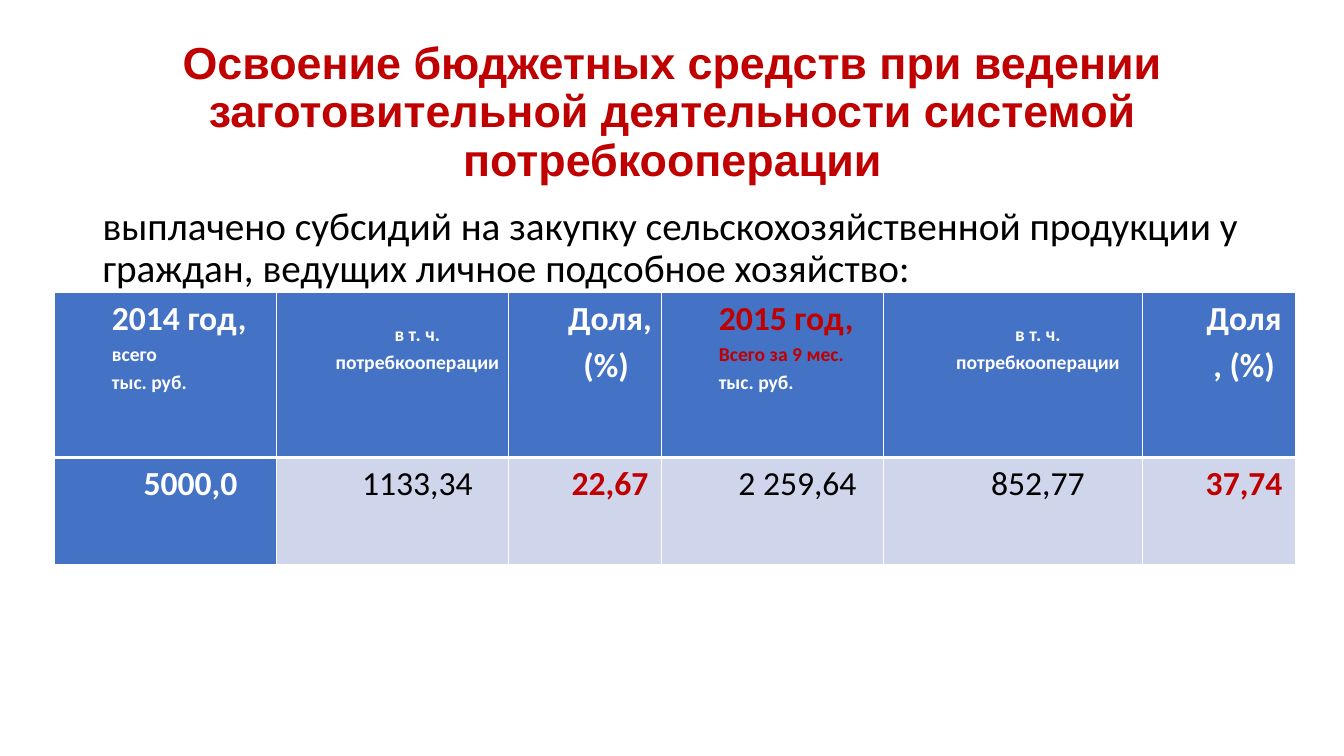
from lxml import etree
from pptx import Presentation
from pptx.dml.color import RGBColor
from pptx.enum.text import MSO_ANCHOR, PP_ALIGN
from pptx.oxml.ns import qn
from pptx.util import Inches, Pt

LEFT, CENTER = PP_ALIGN.LEFT, PP_ALIGN.CENTER
TOP, MIDDLE = MSO_ANCHOR.TOP, MSO_ANCHOR.MIDDLE
RED = RGBColor(0xC0, 0x00, 0x00)
BLUE = RGBColor(0x44, 0x72, 0xC4)
PALE = RGBColor(0xCF, 0xD5, 0xEA)
WHITE = RGBColor(0xFF, 0xFF, 0xFF)
BLACK = RGBColor(0x00, 0x00, 0x00)

TITLE = ("Освоение бюджетных средств при ведении заготовительной "
         "деятельности системой потребкооперации")
INTRO = ("выплачено субсидий на закупку сельскохозяйственной продукции у "
         "граждан, ведущих личное подсобное хозяйство:")
COLS = [2.2, 2.3, 1.52, 2.2, 2.57, 1.52]
ROWS = [1.64, 1.06]
SHARE = [("в т. ч. потребкооперации", 14, WHITE)]
HEADS = [
    (LEFT, 0, [("2014 год,", 24, WHITE), ("всего", 14, WHITE), ("тыс. руб.", 14, WHITE)]),
    (CENTER, 0.27, SHARE),
    (CENTER, 0, [("Доля,", 24, WHITE), ("(%) ", 24, WHITE)]),
    (LEFT, 0, [("2015 год,", 24, RED), ("Всего за 9 мес.", 14, RED), ("тыс. руб.", 14, WHITE)]),
    (CENTER, 0.27, SHARE),
    (CENTER, 0, [("Доля , (%)", 24, WHITE)]),
]
VALUES = [("5000,0", WHITE, BLUE), ("1133,34", BLACK, PALE), ("22,67", RED, PALE),
          ("2 259,64", BLACK, PALE), ("852,77", BLACK, PALE), ("37,74", RED, PALE)]


def add_run(para, text, size, color, bold=False, font="Calibri"):
    """Append one styled run to a paragraph."""
    run = para.add_run()
    run.text = text
    run.font.size = Pt(size)
    run.font.name = font
    run.font.bold = bold
    run.font.color.rgb = color


def add_text(slide, box, anchor, align):
    """Add a wrapping text box and return its first paragraph."""
    frame = slide.shapes.add_textbox(*map(Inches, box)).text_frame
    frame.word_wrap = True
    frame.vertical_anchor = anchor
    para = frame.paragraphs[0]
    para.alignment = align
    para.line_spacing = 0.9
    return para


def add_title(slide, box):
    """Place the red heading."""
    add_run(add_text(slide, box, MIDDLE, CENTER), TITLE, 32, RED, True, "Arial")


def add_intro(slide, box):
    """Place the sentence above the table."""
    para = add_text(slide, box, TOP, LEFT)
    para.space_before = Pt(10)
    add_run(para, INTRO, 28, BLACK)


def set_edges(cell, widths):
    """Draw white left, right, top and bottom borders of the given points."""
    props = cell._tc.get_or_add_tcPr()
    for i, (side, width) in enumerate(zip("LRTB", widths)):
        line = etree.Element(qn(f"a:ln{side}"), w=str(Pt(width)))
        fill = etree.SubElement(line, qn("a:solidFill"))
        etree.SubElement(fill, qn("a:srgbClr"), val=str(WHITE))
        props.insert(i, line)


def fill_cell(cell, fill, lines, align, top, edges):
    """Style one cell and write its lines as indented paragraphs."""
    cell.fill.solid()
    cell.fill.fore_color.rgb = fill
    cell.margin_left = cell.margin_right = Inches(0.07)
    cell.margin_top, cell.margin_bottom = Inches(top), 0
    set_edges(cell, edges)
    frame = cell.text_frame
    for i, (text, size, color) in enumerate(lines):
        para = frame.add_paragraph() if i else frame.paragraphs[0]
        para.alignment = align
        para.line_spacing = 1.15
        props = para._p.get_or_add_pPr()
        props.set("marL", str(Inches(0.5)))
        props.set("indent", "0")
        add_run(para, text, size, color, color != BLACK)


def add_grid(slide, left, top):
    """Place the subsidy table at the given corner."""
    box = map(Inches, (left, top, sum(COLS), sum(ROWS)))
    table = slide.shapes.add_table(len(ROWS), len(COLS), *box).table
    for col, width in zip(table.columns, COLS):
        col.width = Inches(width)
    for row, height in zip(table.rows, ROWS):
        row.height = Inches(height)
    for i, (align, gap, lines) in enumerate(HEADS):
        fill_cell(table.cell(0, i), BLUE, lines, align, gap, (1, 1, 1, 3))
    for i, (text, color, fill) in enumerate(VALUES):
        fill_cell(table.cell(1, i), fill, [(text, 24, color)], CENTER, 0, (1, 1, 3, 1))


def main():
    """Build and save the slide."""
    deck = Presentation()
    deck.slide_width, deck.slide_height = Inches(13.33), Inches(7.5)
    slide = deck.slides.add_slide(deck.slide_layouts[6])
    add_title(slide, (0.92, 0.4, 11.5, 1.45))
    add_intro(slide, (0.92, 2, 11.5, 4.76))
    add_grid(slide, 0.54, 2.9)
    deck.save("out.pptx")


if __name__ == "__main__":
    main()
